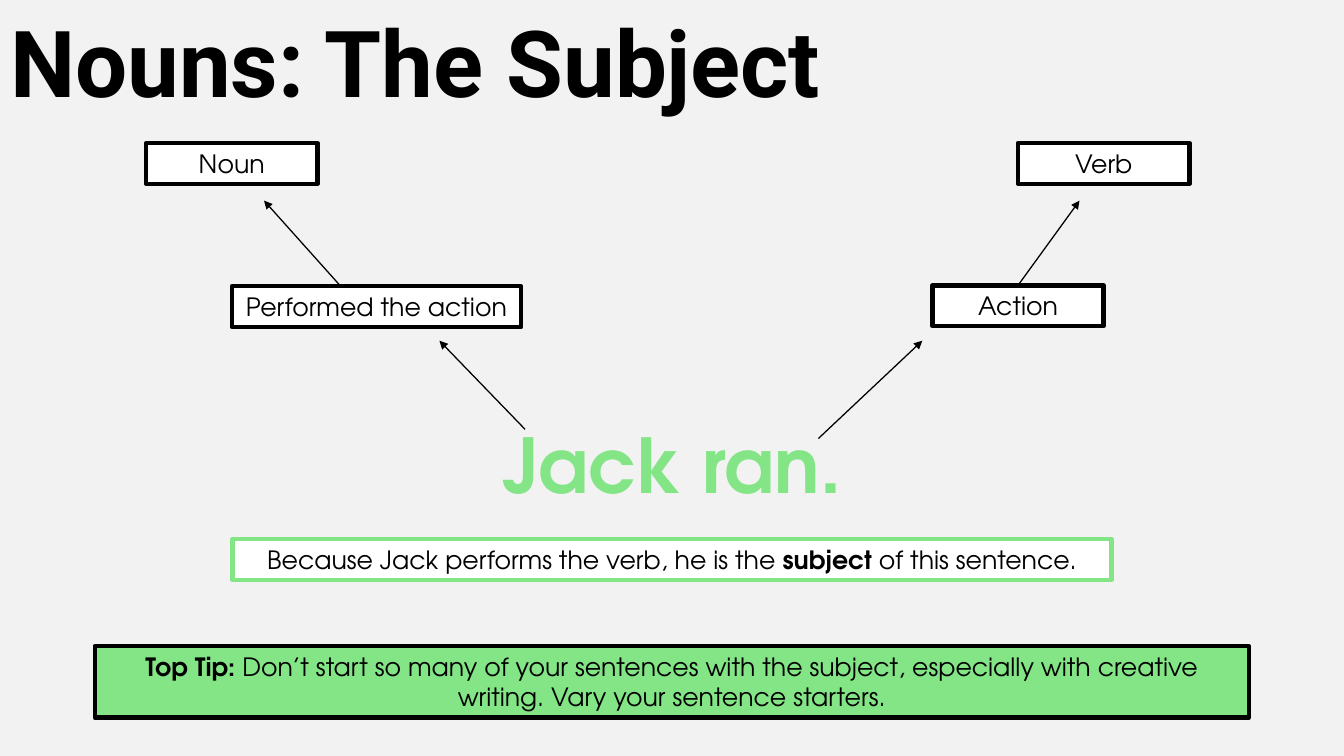
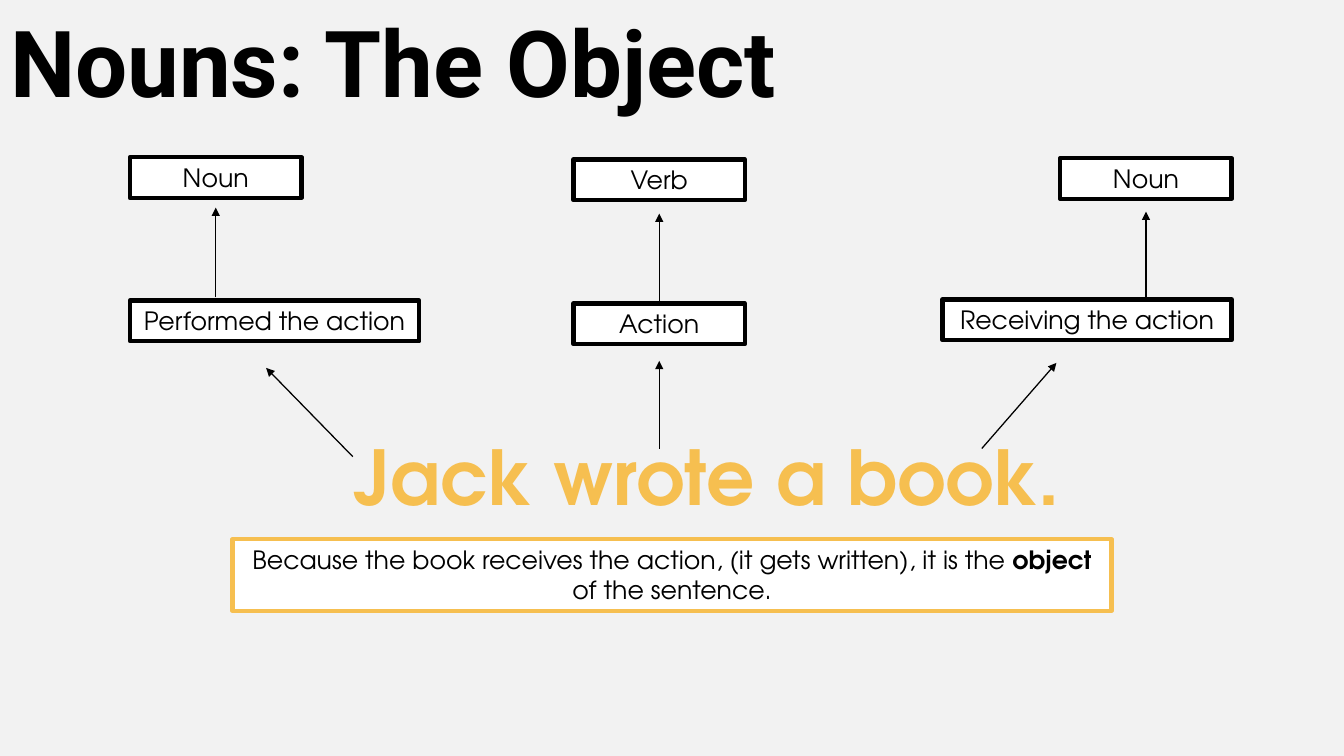
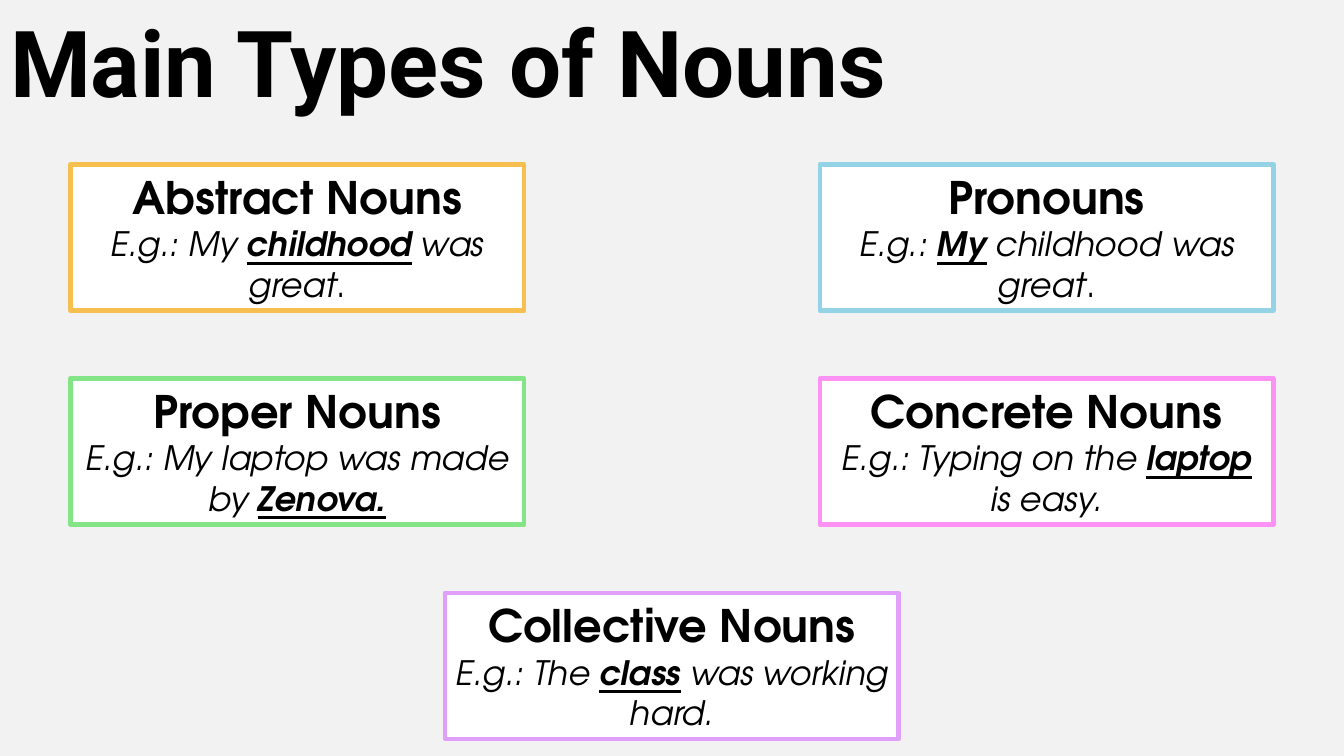
from lxml.etree import SubElement
from pptx import Presentation
from pptx.dml.color import RGBColor
from pptx.enum.shapes import MSO_CONNECTOR, MSO_SHAPE
from pptx.enum.text import MSO_ANCHOR, MSO_AUTO_SIZE, PP_ALIGN
from pptx.oxml.ns import qn
from pptx.util import Pt

BLACK = RGBColor(0x00, 0x00, 0x00)
WHITE = RGBColor(0xFF, 0xFF, 0xFF)
LIGHT_GREY = RGBColor(0xF2, 0xF2, 0xF2)
GREEN = RGBColor(0x83, 0xE5, 0x85)
ORANGE = RGBColor(0xF6, 0xBF, 0x50)
BLUE = RGBColor(0x93, 0xD3, 0xE5)
PINK = RGBColor(0xFC, 0x92, 0xF4)
PURPLE = RGBColor(0xE0, 0xA0, 0xFA)

TITLE_FONT = "Roboto"
BODY_FONT = "TeX Gyre Adventor"
SLIDE_WIDTH = 960
SLIDE_HEIGHT = 540
TITLE_ONLY_LAYOUT = 5

SHORT_LABEL = 122.4
LONG_LABEL = 206.6
ONE_LINE = 29.1
TWO_LINES = 51.1
EXPLANATION_WIDTH = 627.8

CARD_WIDTH = 324
CARD_HEIGHT = 104.4
CARD_LEFT = 50.4
CARD_TOP = 117.4
CARD_COLUMN_STEP = (SLIDE_WIDTH - CARD_WIDTH) / 2 - CARD_LEFT
CARD_ROW_STEP = 153


def format_run(run, size, color=BLACK, style="", font_name=BODY_FONT):
    font = run.font
    font.name = font_name
    font.size = Pt(size)
    font.color.rgb = color
    font.bold = "b" in style
    font.italic = "i" in style
    font.underline = "u" in style


def write_paragraph(paragraph, pieces, size):
    paragraph.alignment = PP_ALIGN.CENTER
    for text, style in pieces:
        run = paragraph.add_run()
        run.text = text
        format_run(run, size, style=style)


def add_titled_slide(presentation, text):
    slide = presentation.slides.add_slide(presentation.slide_layouts[TITLE_ONLY_LAYOUT])
    title = slide.shapes.title
    title.left, title.top = Pt(0), Pt(0)
    title.width, title.height = Pt(SLIDE_WIDTH), Pt(96.5)
    text_frame = title.text_frame
    text_frame.text = text
    text_frame.auto_size = MSO_AUTO_SIZE.NONE
    text_frame.vertical_anchor = MSO_ANCHOR.MIDDLE
    paragraph = text_frame.paragraphs[0]
    paragraph.alignment = PP_ALIGN.LEFT
    paragraph.line_spacing = 0.9
    format_run(paragraph.runs[0], 66, style="b", font_name=TITLE_FONT)
    return slide


def add_box(slide, left, top, width, height, line_color=BLACK, fill_color=WHITE):
    shape = slide.shapes.add_shape(
        MSO_SHAPE.RECTANGLE, Pt(left), Pt(top), Pt(width), Pt(height))
    shape.shadow.inherit = False
    shape.fill.solid()
    shape.fill.fore_color.rgb = fill_color
    shape.line.color.rgb = line_color
    shape.line.width = Pt(3.15)
    text_frame = shape.text_frame
    text_frame.word_wrap = True
    text_frame.auto_size = MSO_AUTO_SIZE.SHAPE_TO_FIT_TEXT
    text_frame.vertical_anchor = MSO_ANCHOR.TOP
    return shape


def add_label(slide, text, left, top, width=SHORT_LABEL):
    shape = add_box(slide, left, top, width, ONE_LINE)
    write_paragraph(shape.text_frame.paragraphs[0], [(text, "")], 18)
    return shape


def add_explanation(slide, pieces, height, color):
    left = (SLIDE_WIDTH - EXPLANATION_WIDTH) / 2
    shape = add_box(slide, left, 385.2, EXPLANATION_WIDTH, height, color)
    write_paragraph(shape.text_frame.paragraphs[0], pieces, 18)


def add_sentence(slide, text, left, top, width, color):
    shape = slide.shapes.add_textbox(Pt(left), Pt(top), Pt(width), Pt(72.7))
    text_frame = shape.text_frame
    text_frame.text = text
    text_frame.word_wrap = False
    text_frame.auto_size = MSO_AUTO_SIZE.SHAPE_TO_FIT_TEXT
    paragraph = text_frame.paragraphs[0]
    paragraph.alignment = PP_ALIGN.CENTER
    format_run(paragraph.runs[0], 54, color, "b")


def add_arrow(slide, start, end, source=None):
    connector = slide.shapes.add_connector(
        MSO_CONNECTOR.STRAIGHT, *(Pt(value) for value in (*start, *end)))
    connector.line.color.rgb = BLACK
    connector.line.width = Pt(0.9)
    if source is not None:
        connector.begin_connect(source, 0)
    properties = connector._element.spPr
    SubElement(properties.find(qn("a:ln")), qn("a:tailEnd"), type="triangle")
    SubElement(properties, qn("a:effectLst"))


def add_card(slide, column, row, color, heading, example):
    shape = add_box(
        slide, CARD_LEFT + column * CARD_COLUMN_STEP, CARD_TOP + row * CARD_ROW_STEP,
        CARD_WIDTH, CARD_HEIGHT, color)
    text_frame = shape.text_frame
    write_paragraph(text_frame.paragraphs[0], [(heading, "b")], 32)
    write_paragraph(text_frame.add_paragraph(), example, 24)


def build_subject_slide(presentation):
    slide = add_titled_slide(presentation, "Nouns: The Subject")
    add_sentence(slide, "Jack ran.", 350, 295.2, 260, GREEN)

    add_label(slide, "Noun", 104.4, 102.2)
    add_label(slide, "Performed the action", 165.6, 204.5, LONG_LABEL)
    add_arrow(slide, (375.1, 306.7), (313.9, 243.4))
    add_arrow(slide, (243.4, 204.5), (188.6, 143.3))

    add_label(slide, "Verb", 727.2, 102.2)
    action = add_label(slide, "Action", 666, 203.8)
    add_arrow(slide, (584.6, 313.2), (658.8, 243.4))
    add_arrow(slide, (727.2, 203.8), (771.1, 143.3), action)

    add_explanation(slide, [
        ("Because Jack performs the verb, he is the ", ""),
        ("subject", "b"),
        (" of this sentence.", ""),
    ], ONE_LINE, GREEN)
    tip = add_box(slide, 67.7, 461.5, 824.4, TWO_LINES, fill_color=GREEN)
    write_paragraph(tip.text_frame.paragraphs[0], [
        ("Top Tip: ", "b"),
        ("Don’t start so many of your sentences with the subject, especially with "
         "creative writing. Vary your sentence starters.", ""),
    ], 18)


def build_object_slide(presentation):
    slide = add_titled_slide(presentation, "Nouns: The Object")
    add_sentence(slide, "Jack wrote a book.", 241.9, 303.8, 525.6, ORANGE)

    add_label(slide, "Noun", 92.9, 112.3)
    add_label(slide, "Performed the action", 92.9, 214.6, LONG_LABEL)
    add_arrow(slide, (252, 326.2), (190.1, 262.8))
    add_arrow(slide, (154.1, 212.4), (154.1, 148.3))

    add_label(slide, "Verb", 409.7, 113.8)
    action = add_label(slide, "Action", 409.7, 216.7)
    add_arrow(slide, (470.9, 320.4), (470.9, 257.8))
    add_arrow(slide, (470.9, 216.7), (470.9, 152.6), action)

    add_label(slide, "Noun", 757.4, 113)
    add_label(slide, "Receiving the action", 673.2, 213.8, LONG_LABEL)
    add_arrow(slide, (701.3, 320.4), (754.6, 259.2))
    add_arrow(slide, (818.6, 213.8), (818.6, 151.2))

    add_explanation(slide, [
        ("Because the book receives the action, (it gets written), it is the ", ""),
        ("object", "b"),
        (" of the sentence.", ""),
    ], TWO_LINES, ORANGE)


def build_types_slide(presentation):
    slide = add_titled_slide(presentation, "Main Types of Nouns")
    cards = [
        (0, 0, ORANGE, "Abstract Nouns",
         [("E.g.: My ", "i"), ("childhood", "biu"), (" was great", "i"), (".", "")]),
        (2, 0, BLUE, "Pronouns",
         [("E.g.: ", "i"), ("My", "biu"), (" childhood was great", "i"), (".", "")]),
        (0, 1, GREEN, "Proper Nouns",
         [("E.g.: My laptop was made by ", "i"), ("Zenova.", "biu")]),
        (2, 1, PINK, "Concrete Nouns",
         [("E.g.: Typing on the ", "i"), ("laptop ", "biu"), ("is easy.", "i")]),
        (1, 2, PURPLE, "Collective Nouns",
         [("E.g.: The ", "i"), ("class", "biu"), (" was working hard.", "i")]),
    ]
    for card in cards:
        add_card(slide, *card)


def main():
    presentation = Presentation()
    presentation.slide_width = Pt(SLIDE_WIDTH)
    presentation.slide_height = Pt(SLIDE_HEIGHT)
    background = presentation.slide_master.background.fill
    background.solid()
    background.fore_color.rgb = LIGHT_GREY
    build_subject_slide(presentation)
    build_object_slide(presentation)
    build_types_slide(presentation)
    presentation.save("out.pptx")


if __name__ == "__main__":
    main()
